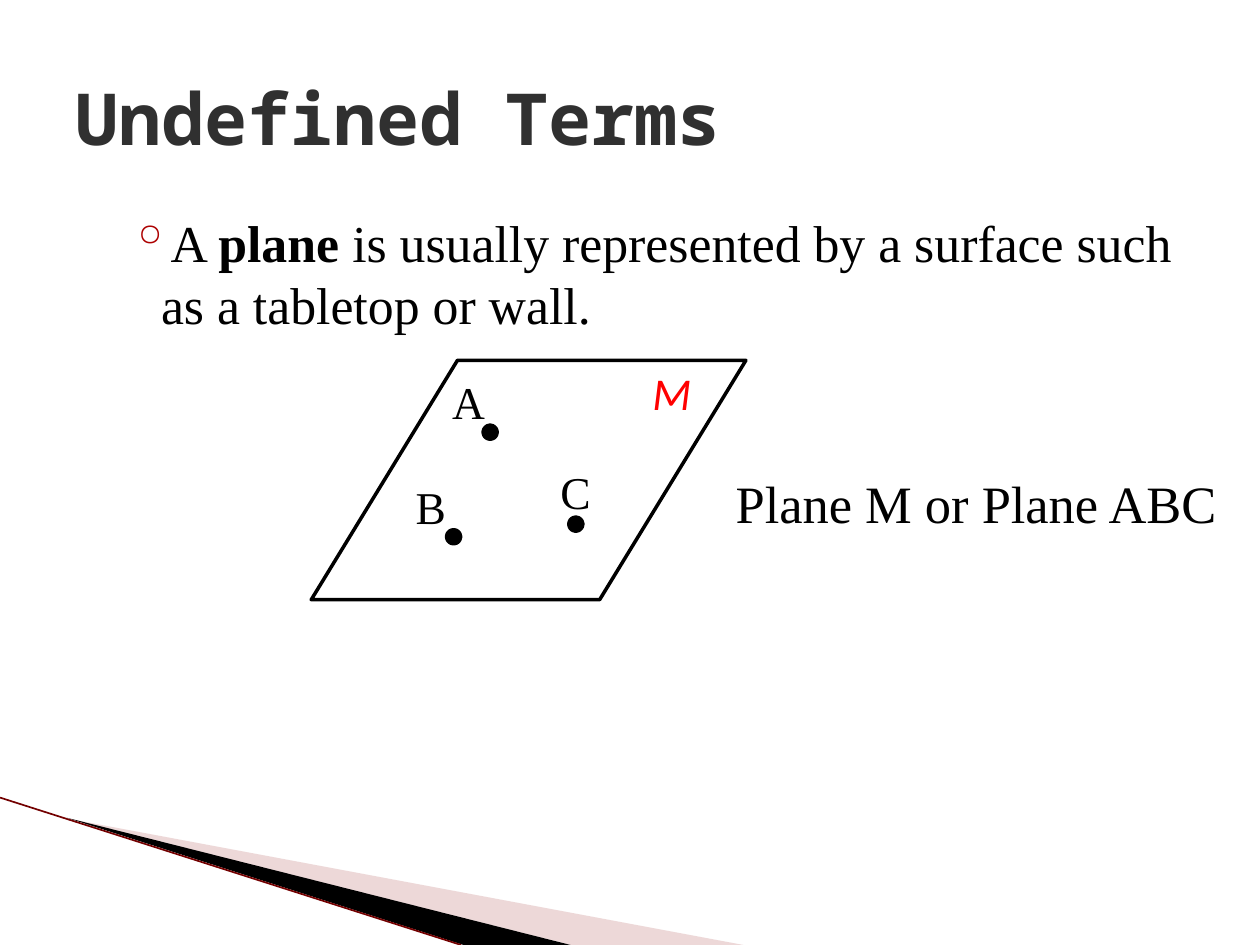
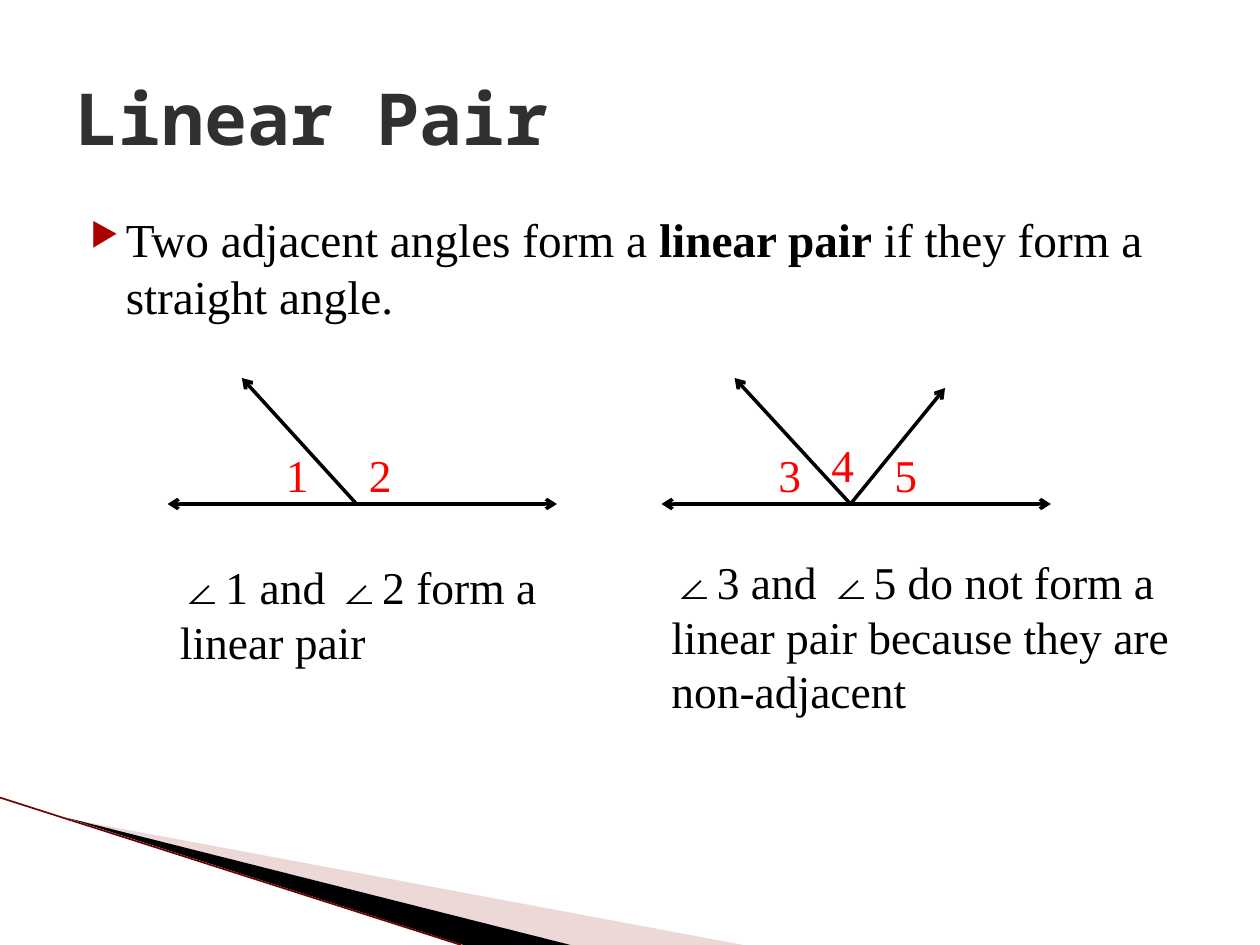
from lxml import etree
from pptx import Presentation
from pptx.dml.color import RGBColor
from pptx.enum.shapes import MSO_CONNECTOR, MSO_SHAPE
from pptx.enum.text import MSO_ANCHOR
from pptx.oxml.ns import qn
from pptx.util import Inches, Pt

STRAIGHT = MSO_CONNECTOR.STRAIGHT
OVAL = MSO_SHAPE.OVAL
PARALLELOGRAM = MSO_SHAPE.PARALLELOGRAM
TOP, MIDDLE = MSO_ANCHOR.TOP, MSO_ANCHOR.MIDDLE

BLACK, WHITE, RED = "000000", "FFFFFF", "FF0000"
TITLE_GREY, BULLET_RED = "303030", "AD0101"
BAND_PINK, BAND_EDGE = "D29E9E", "730000"
SERIF, MONO, SANS = "Times New Roman", "Noto Sans Mono", "Calibri"

# Shared wedge at the bottom left: corner points, colour, opacity in percent
BANDS = [
    ([(0.55, 6.5), (5.9, 7.5), (4.53, 7.5)], BAND_PINK, 40),
    ([(0.53, 6.49), (4.53, 7.5), (3.68, 7.5)], BLACK, 100),
]
BAND_LINE = ((0, 6.33), (3.66, 7.5))

# Slide 1
PLANE_TITLE = "Undefined Terms"
PLANE_TEXT = [("A ", False), ("plane", True),
              (" is usually represented by a surface such as a tabletop or wall.", False)]
PLANE_BULLET = {"character": "◦", "left": 0.68, "hanging": 0.25, "percent": 100}
PLANE_BOX = (2.47, 2.86, 3.45, 1.9)
PLANE_SLANT = 0.611
POINT_SIZE = 0.08
# Name, position of the dot, position of its label
POINTS = [
    ("A", (3.85, 3.39), (3.49, 2.92)),
    ("B", (3.56, 4.22), (3.2, 3.75)),
    ("C", (4.53, 4.12), (4.35, 3.63)),
]

# Slide 2
PAIR_TITLE = "Linear Pair"
PAIR_TEXT = [("Two adjacent angles form a ", False), ("linear pair", True),
             (" if they form a straight angle.", False)]
PAIR_BULLET = {"character": "▶", "left": 0.4, "hanging": 0.28, "percent": 68}
BASE_LINE_Y, BASE_LINE_LENGTH = 4, 3.09
VERTEX_OFFSET = 1.5
# Ray tips and angle labels are measured from the left end of the base line
ANGLE_FIGURES = [
    {"left": 1.33, "rays": [(0.59, 3)],
     "angles": [("1", 0.84, 3.5), ("2", 1.5, 3.5)],
     "caption": "∠1 and ∠2 form a linear pair", "caption_box": (1.33, 4.39, 3.24, 0.98)},
    {"left": 5.25, "rays": [(0.58, 3), (2.25, 3.08)],
     "angles": [("3", 0.83, 3.5), ("4", 1.25, 3.42), ("5", 1.75, 3.5)],
     "caption": "∠3 and ∠5 do not form a linear pair because they are non-adjacent",
     "caption_box": (5.23, 4.35, 4.23, 1.41)},
]


def rgb(color):
    return RGBColor.from_string(color)


def add_text(slide, box, pieces, size, color=BLACK, font=SERIF, italic=False,
             anchor=TOP, bullet=None):
    """Add a one-paragraph text box; pieces is a string or (text, bold) pairs."""
    if isinstance(pieces, str):
        pieces = [(pieces, False)]
    shape = slide.shapes.add_textbox(*map(Inches, box))
    text_frame = shape.text_frame
    text_frame.word_wrap = True
    text_frame.vertical_anchor = anchor
    paragraph = text_frame.paragraphs[0]
    if bullet:
        add_bullet(paragraph, **bullet)
    for text, bold in pieces:
        run = paragraph.add_run()
        run.text = text
        run.font.name = font
        run.font.size = Pt(size)
        run.font.bold = bold
        run.font.italic = italic
        run.font.color.rgb = rgb(color)


def add_bullet(paragraph, character, left, hanging, percent):
    properties = paragraph._p.get_or_add_pPr()
    properties.set("marL", str(Inches(left)))
    properties.set("indent", str(-Inches(hanging)))
    bullet_color = etree.SubElement(properties, qn("a:buClr"))
    etree.SubElement(bullet_color, qn("a:srgbClr"), val=BULLET_RED)
    etree.SubElement(properties, qn("a:buSzPct"), val=str(percent * 1000))
    etree.SubElement(properties, qn("a:buChar"), char=character)


def add_line(slide, start, end, color=BLACK, width=2, arrows=()):
    """Draw a line; arrows lists which of headEnd and tailEnd carry an arrowhead."""
    connector = slide.shapes.add_connector(STRAIGHT, *map(Inches, (*start, *end)))
    connector.line.color.rgb = rgb(color)
    connector.line.width = Pt(width)
    line_properties = connector.line._get_or_add_ln()
    for arrow in arrows:
        etree.SubElement(line_properties, qn(f"a:{arrow}"), type="arrow")
    etree.SubElement(connector._element.spPr, qn("a:effectLst"))


def add_outlined_shape(slide, kind, box, fill, line_width):
    shape = slide.shapes.add_shape(kind, *map(Inches, box))
    shape.shadow.inherit = False
    shape.fill.solid()
    shape.fill.fore_color.rgb = rgb(fill)
    shape.line.color.rgb = rgb(BLACK)
    shape.line.width = Pt(line_width)
    return shape


def add_band(slide, corners, color, opacity):
    first, *others = [(Inches(x), Inches(y)) for x, y in corners]
    builder = slide.shapes.build_freeform(*first)
    builder.add_line_segments(others, close=True)
    band = builder.convert_to_shape()
    band.shadow.inherit = False
    band.fill.solid()
    band.fill.fore_color.rgb = rgb(color)
    band.line.fill.background()
    if opacity < 100:
        color_element = band._element.spPr.find(qn("a:solidFill"))[0]
        etree.SubElement(color_element, qn("a:alpha"), val=str(opacity * 1000))


def add_base_slide(presentation, title):
    """Add a blank slide with the shared bands and title."""
    slide = presentation.slides.add_slide(presentation.slide_layouts[6])
    for band in BANDS:
        add_band(slide, *band)
    add_line(slide, *BAND_LINE, color=BAND_EDGE, width=0.95)
    add_text(slide, (0.5, 0.3, 9, 1.25), [(title, True)], 41, TITLE_GREY, MONO,
             anchor=MIDDLE)
    return slide


def build_plane_slide(presentation):
    slide = add_base_slide(presentation, PLANE_TITLE)
    add_text(slide, (0.5, 1.62, 9, 1.2), PLANE_TEXT, 29.6, bullet=PLANE_BULLET)
    plane = add_outlined_shape(slide, PARALLELOGRAM, PLANE_BOX, WHITE, 2)
    plane.adjustments[0] = PLANE_SLANT
    for name, dot, label in POINTS:
        add_outlined_shape(slide, OVAL, (*dot, POINT_SIZE, POINT_SIZE), BLACK, 4.33)
        add_text(slide, (*label, 0.33, 0.54), name, 26)
    add_text(slide, (5.08, 2.85, 0.64, 0.54), "M", 26, RED, SANS, italic=True)
    add_text(slide, (5.74, 3.69, 4.11, 0.61), "Plane M or Plane ABC", 30)


def build_pair_slide(presentation):
    slide = add_base_slide(presentation, PAIR_TITLE)
    add_text(slide, (0.5, 1.62, 9, 1.2), PAIR_TEXT, 27, bullet=PAIR_BULLET)
    for figure in ANGLE_FIGURES:
        left = figure["left"]
        add_line(slide, (left, BASE_LINE_Y), (left + BASE_LINE_LENGTH, BASE_LINE_Y),
                 arrows=("headEnd", "tailEnd"))
        for tip_x, tip_y in figure["rays"]:
            add_line(slide, (left + VERTEX_OFFSET, BASE_LINE_Y), (left + tip_x, tip_y),
                     arrows=("tailEnd",))
        for number, x, y in figure["angles"]:
            add_text(slide, (left + x, y, 0.42, 0.54), number, 26, RED)
        add_text(slide, figure["caption_box"], figure["caption"], 26)


def main():
    presentation = Presentation()
    presentation.slide_width = Inches(10)
    presentation.slide_height = Inches(7.5)
    build_plane_slide(presentation)
    build_pair_slide(presentation)
    presentation.save("out.pptx")


if __name__ == "__main__":
    main()
